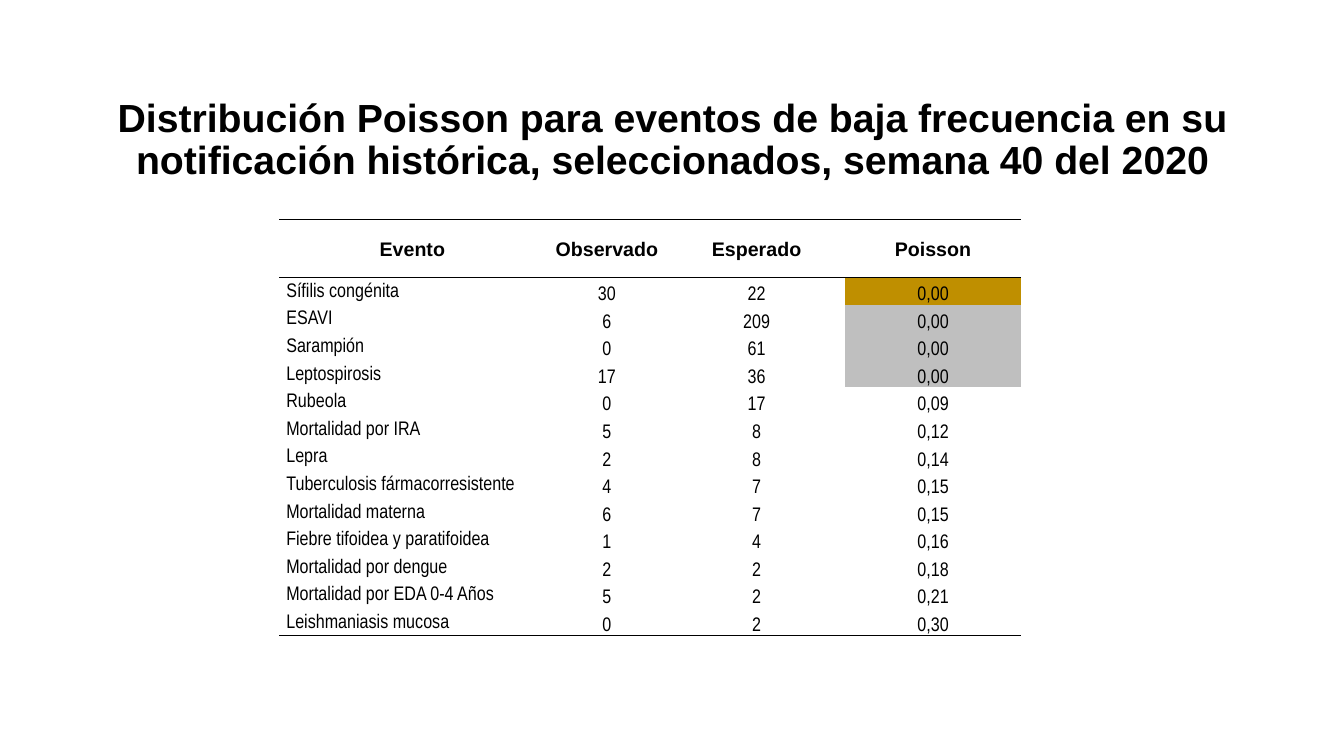
from lxml import etree
from pptx import Presentation
from pptx.dml.color import RGBColor
from pptx.enum.text import MSO_ANCHOR, PP_ALIGN
from pptx.oxml.ns import qn
from pptx.util import Inches, Pt

LEFT, CENTER = PP_ALIGN.LEFT, PP_ALIGN.CENTER
MIDDLE, BOTTOM = MSO_ANCHOR.MIDDLE, MSO_ANCHOR.BOTTOM

BLACK = RGBColor(0x00, 0x00, 0x00)
GOLD = RGBColor(0xBF, 0x8F, 0x00)
GRAY = RGBColor(0xBF, 0xBF, 0xBF)

TITLE = ("Distribución Poisson para eventos de baja frecuencia en su "
         "notificación histórica, seleccionados, semana 40 del 2020")
HEADERS = ("Evento", "Observado", "Esperado", "Poisson")
EVENTS = [
    ("Sífilis congénita", "30", "22", "0,00"),
    ("ESAVI", "6", "209", "0,00"),
    ("Sarampión", "0", "61", "0,00"),
    ("Leptospirosis", "17", "36", "0,00"),
    ("Rubeola", "0", "17", "0,09"),
    ("Mortalidad por IRA", "5", "8", "0,12"),
    ("Lepra", "2", "8", "0,14"),
    ("Tuberculosis fármacorresistente", "4", "7", "0,15"),
    ("Mortalidad materna", "6", "7", "0,15"),
    ("Fiebre tifoidea y paratifoidea", "1", "4", "0,16"),
    ("Mortalidad por dengue", "2", "2", "0,18"),
    ("Mortalidad por EDA 0-4 Años", "5", "2", "0,21"),
    ("Leishmaniasis mucosa", "0", "2", "0,30"),
]
POISSON_COL = len(HEADERS) - 1
SIGNIFICANT = "0,00"

COL_WIDTHS = (2.64, 1.22, 1.75, 1.75)
HEADER_H, EVENTS_H = 0.57, 3.56
NO_STYLE = "{2D5ABB26-0587-4C30-8999-92F81FD0307C}"


def write(tf, text, size=14, font="Arial", bold=False, align=CENTER, spacing=1.15):
    p = tf.paragraphs[0]
    p.alignment = align
    p.line_spacing = spacing
    r = p.add_run()
    r.text = text
    r.font.size = Pt(size)
    r.font.name = font
    r.font.bold = bold
    r.font.color.rgb = BLACK


def set_borders(cell, ruled_sides):
    """Rule the given sides in black and leave the others bare."""
    tc_pr = cell._tc.get_or_add_tcPr()
    for i, side in enumerate("LRTB"):
        ln = etree.Element(qn(f"a:ln{side}"), w=str(Pt(1)))
        if side in ruled_sides:
            fill = etree.SubElement(ln, qn("a:solidFill"))
            etree.SubElement(fill, qn("a:srgbClr"), val=str(BLACK))
        else:
            etree.SubElement(ln, qn("a:noFill"))
        tc_pr.insert(i, ln)


def poisson_fill(event):
    """Gold for a significant rise, gray for a significant drop."""
    name, observed, expected, poisson = event
    if poisson != SIGNIFICANT:
        return None
    return GOLD if int(observed) > int(expected) else GRAY


def format_cell(cell, anchor, color=None, ruled_sides=""):
    cell.vertical_anchor = anchor
    cell.margin_left = cell.margin_right = Inches(0.07)
    cell.margin_top = cell.margin_bottom = 0
    if color is None:
        cell.fill.background()
    else:
        cell.fill.solid()
        cell.fill.fore_color.rgb = color
    set_borders(cell, ruled_sides)


def add_title(slide):
    sp = slide.shapes.add_textbox(Inches(0.92), Inches(0.86), Inches(11.5), Inches(1.51))
    tf = sp.text_frame
    tf.word_wrap = True
    tf.vertical_anchor = MIDDLE
    tf.margin_bottom = Inches(0.48)
    write(tf, TITLE, size=28, bold=True, spacing=0.9)


def add_events_table(slide):
    table = slide.shapes.add_table(
        len(EVENTS) + 1, len(HEADERS), Inches(2.77), Inches(2.18),
        Inches(sum(COL_WIDTHS)), Inches(HEADER_H + EVENTS_H)).table
    table._tbl.tblPr.find(qn("a:tableStyleId")).text = NO_STYLE
    table.horz_banding = False
    for column, width in zip(table.columns, COL_WIDTHS):
        column.width = Inches(width)
    for row in table.rows:
        row.height = Inches(EVENTS_H / len(EVENTS))
    table.rows[0].height = Inches(HEADER_H)

    for c, header in enumerate(HEADERS):
        cell = table.cell(0, c)
        format_cell(cell, MIDDLE, ruled_sides="TB")
        write(cell.text_frame, header, bold=True)

    for r, event in enumerate(EVENTS, start=1):
        sides = "T" if r == 1 else "B" if r == len(EVENTS) else ""
        for c, text in enumerate(event):
            cell = table.cell(r, c)
            color = poisson_fill(event) if c == POISSON_COL else None
            format_cell(cell, BOTTOM if c else MIDDLE, color, sides)
            write(cell.text_frame, text, font="Arial Narrow", align=CENTER if c else LEFT)


def main():
    prs = Presentation()
    prs.slide_width, prs.slide_height = Inches(13.33), Inches(7.5)
    slide = prs.slides.add_slide(prs.slide_layouts[6])
    add_title(slide)
    add_events_table(slide)
    prs.save("out.pptx")


if __name__ == "__main__":
    main()
